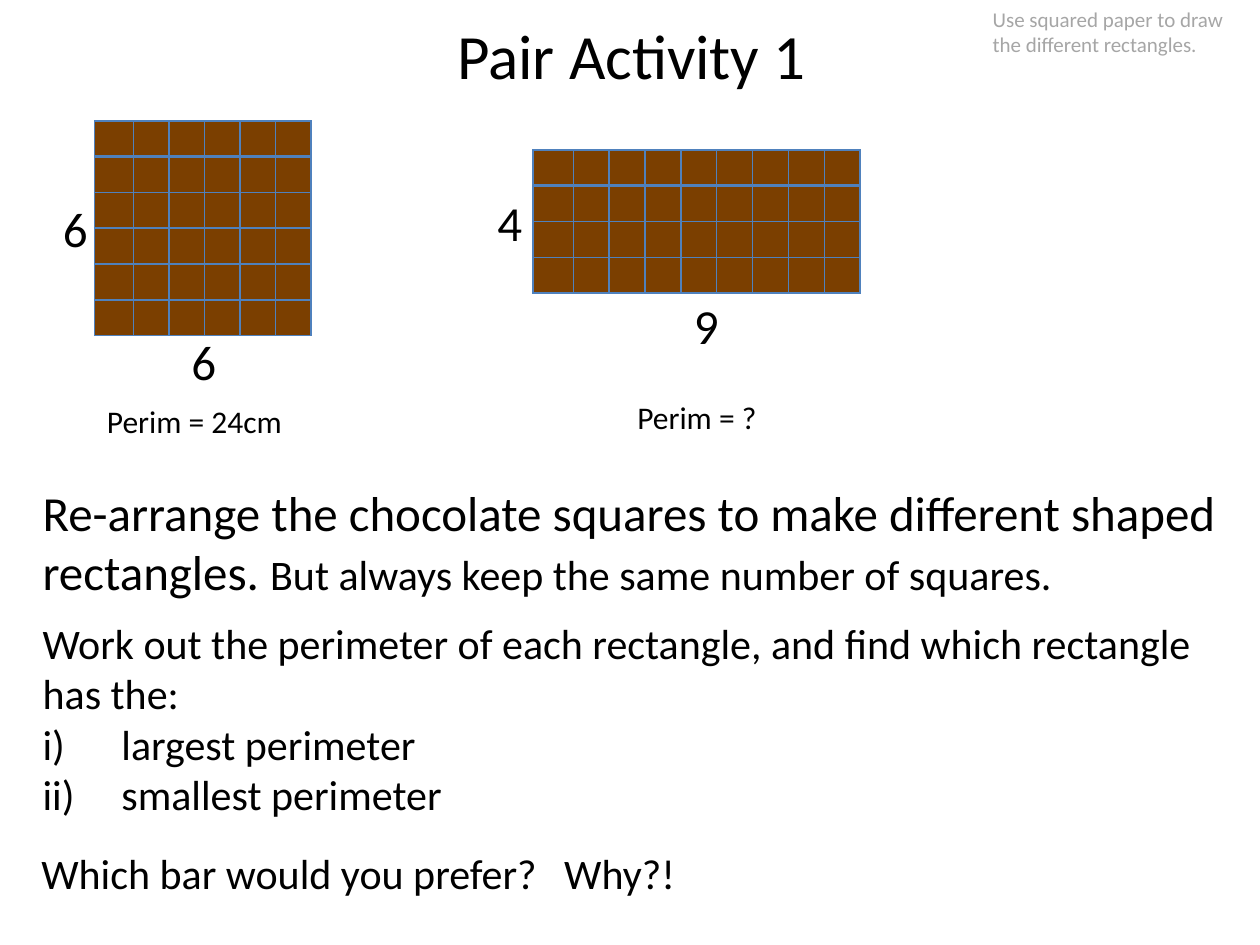
from dataclasses import dataclass

from lxml.etree import SubElement
from pptx import Presentation
from pptx.dml.color import RGBColor
from pptx.enum.text import MSO_AUTO_SIZE
from pptx.oxml.ns import qn
from pptx.util import Inches, Pt


@dataclass(frozen=True)
class Theme:
    """Colours, type sizes, line widths and grid of the lesson slide."""
    font: str = "Calibri"
    ink: str = "000000"
    pale: str = "A6A6A6"
    cocoa: str = "7B3F00"
    edge: str = "4F81BD"
    title: int = 36
    large: int = 28
    body: int = 24
    label: int = 18
    note: int = 12
    thin: int = 1
    thick: int = 2
    wide: int = 100
    high: int = 75


class Page:
    """Draws text and chocolate bars on one slide, placed by grid columns and rows."""

    def __init__(self, deck, theme):
        self.theme = theme
        self.slide = deck.slides.add_slide(deck.slide_layouts[6])
        self.col = deck.slide_width / theme.wide
        self.row = deck.slide_height / theme.high

    def place(self, x, y, w, h):
        return [round(n) for n in (x * self.col, y * self.row, w * self.col, h * self.row)]

    def style(self, item, values):
        for key, value in values.items():
            setattr(item, key, value)

    def text(self, box, paras, size, wrap=True, color=None):
        frame = self.slide.shapes.add_textbox(*self.place(*box)).text_frame
        self.style(frame, {"word_wrap": wrap, "auto_size": MSO_AUTO_SIZE.SHAPE_TO_FIT_TEXT})
        tone = RGBColor.from_string(color or self.theme.ink)
        for i, runs in enumerate(paras):
            para = frame.add_paragraph() if i else frame.paragraphs[0]
            for words, points in runs:
                run = para.add_run()
                run.text = words
                self.style(run.font, {"name": self.theme.font, "size": Pt(points or size)})
                run.font.color.rgb = tone
        return frame

    def line(self, box, words, size, **more):
        return self.text(box, [[(words, None)]], size, **more)

    def number(self, para, indent):
        props = para._p.get_or_add_pPr()
        step = round(indent * self.col)
        for key, value in {"marL": step, "indent": -step}.items():
            props.set(key, str(value))
        SubElement(props, qn("a:buFont"), typeface="+mj-lt")
        SubElement(props, qn("a:buAutoNum"), type="romanLcParenR")

    def tab(self, para, stop):
        tabs = SubElement(para._p.get_or_add_pPr(), qn("a:tabLst"))
        SubElement(tabs, qn("a:tab"), pos=str(round(stop * self.col)), algn="l")

    def border(self, cell, widths):
        props = cell._tc.get_or_add_tcPr()
        for side, width in widths.items():
            edge = SubElement(props, qn(f"a:ln{side}"), w=str(Pt(width)))
            fill = SubElement(edge, qn("a:solidFill"))
            SubElement(fill, qn("a:srgbClr"), val=self.theme.edge)

    def bar(self, x, y, rows, cols, first, step, tall):
        look = self.theme
        box = self.place(x, y, first + step * (cols - 1), tall * rows)
        table = self.slide.shapes.add_table(rows, cols, *box).table
        self.style(table, {"first_row": False, "horz_banding": False})
        for i, col in enumerate(table.columns):
            col.width = round((step if i else first) * self.col)
        for i, row in enumerate(table.rows):
            row.height = round(tall * self.row)
            top = look.thick if i == 1 else look.thin
            base = look.thick if i == 0 else look.thin
            for cell in row.cells:
                sides = ("left", "right", "top", "bottom")
                self.style(cell, {f"margin_{side}": 0 for side in sides})
                self.border(cell, {"L": look.thin, "R": look.thin, "T": top, "B": base})
                cell.fill.solid()
                cell.fill.fore_color.rgb = RGBColor.from_string(look.cocoa)
                end = cell.text_frame.paragraphs[0]._p.get_or_add_endParaRPr()
                end.set("sz", str(look.note * 100))


def main():
    deck = Presentation()
    DIMS = {"slide_width": Inches(10), "slide_height": Inches(7.5)}
    for key, value in DIMS.items():
        setattr(deck, key, value)
    look = Theme()
    page = Page(deck, look)

    page.line((35.3, 0.8, 30, 7.1), "Pair Activity 1", look.title, wrap=False)
    page.text((2.4, 37.8, 95.7, 10.4), [[
        ("Re-arrange the chocolate squares to make different shaped rectangles. ", None),
        ("But always keep the same number of squares.", look.body),
    ]], look.large)
    tasks = page.text((2.4, 48.5, 95.6, 17.2), [
        [("Work out the perimeter of each rectangle, and find which rectangle has the:", None)],
        [("largest perimeter", None)],
        [("smallest perimeter", None)],
    ], look.body)
    for para in tasks.paragraphs[1:]:
        page.number(para, 6.25)

    page.bar(7.5, 9.6, 6, 6, first=3.1, step=2.82, tall=2.84)
    page.bar(42.3, 11.9, 4, 9, first=3.2, step=2.85, tall=2.84)
    for x, y, digit in ((4, 15.3, "6"), (14.2, 25.8, "6"), (38.5, 14.8, "4"), (54.1, 23, "9")):
        page.line((x, y, 4, 5.7), digit, look.large, wrap=False)
    for x, y, w, words in ((7.5, 31.4, 16.1, "Perim = 24cm"), (49.6, 31.1, 11.6, "Perim = ?")):
        page.line((x, y, w, 4), words, look.label, wrap=False)

    ask = page.line((2.3, 66.8, 61.7, 5), "Which bar would you prefer?\tWhy?!", look.body)
    page.tab(ask.paragraphs[0], 41.5)
    page.line((77.8, 0, 22.2, 5), "Use squared paper to draw the different rectangles.",
              look.note, color=look.pale)
    deck.save("out.pptx")


if __name__ == "__main__":
    main()
